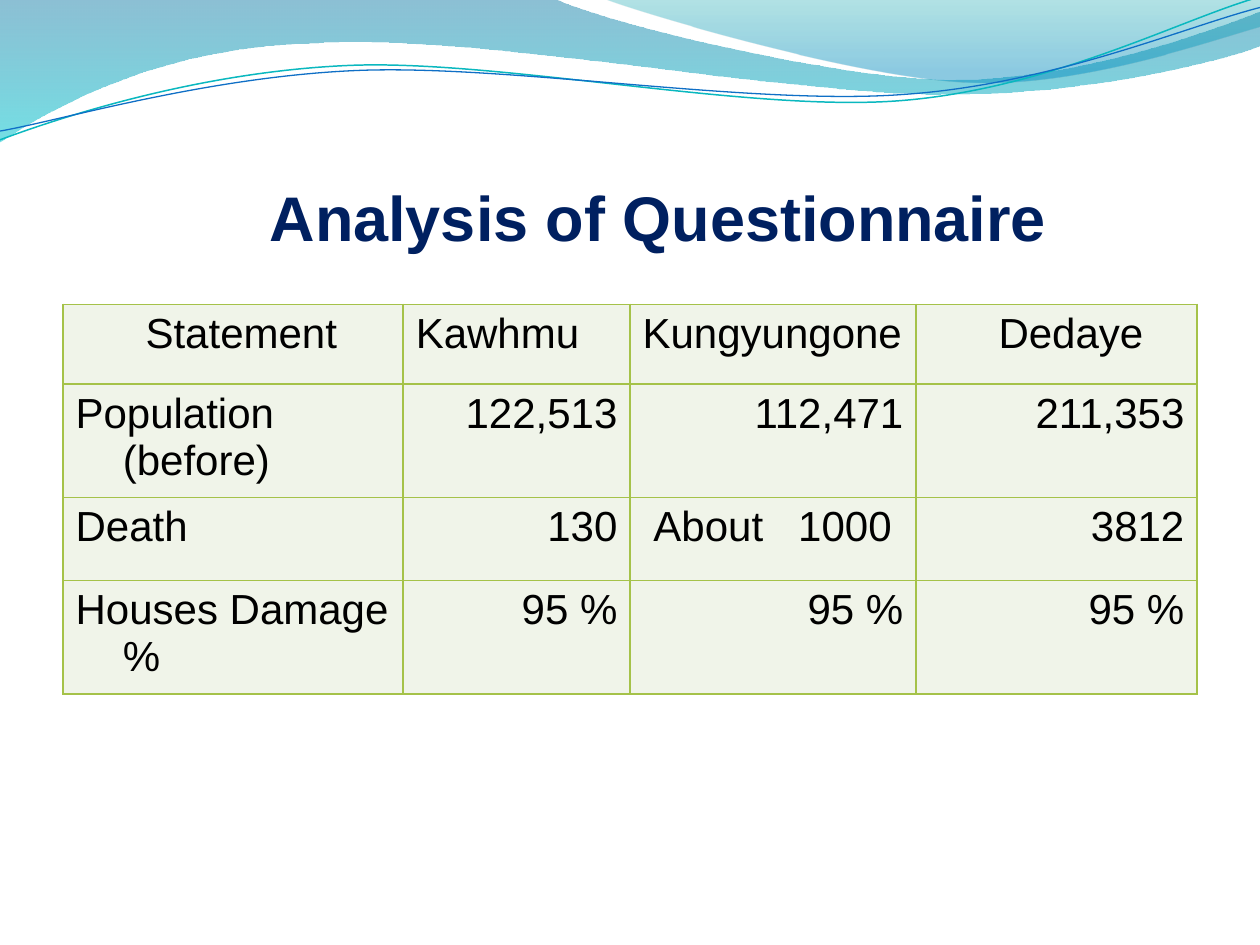
import math

import pptx
import pptx.dml.color
import pptx.enum.text
import pptx.oxml
import pptx.oxml.ns
import pptx.util

Pt = pptx.util.Pt
RGB = pptx.dml.color.RGBColor
ALIGN = pptx.enum.text.PP_ALIGN
ANCHOR = pptx.enum.text.MSO_ANCHOR

NAVY = RGB(0x00, 0x20, 0x60)
BLACK = RGB(0x00, 0x00, 0x00)
PALE = RGB(0xF0, 0xF4, 0xE9)
GREEN = RGB(0xA5, 0xC2, 0x49)
TEAL = RGB(0x0A, 0xB8, 0xBF)
BLUE = RGB(0x0F, 0x6F, 0xC6)
DEEP = RGB(0x00, 0x74, 0xA1)
CYAN = RGB(0x00, 0xC6, 0xCF)
SEA = RGB(0x00, 0xA1, 0xA9)
SKY = RGB(0x00, 0x8B, 0xBF)

FONT = "Arial"
HANG = 27
TILT = 2.7

BAND = [(0, 0), (316.8, -0.7),
        (342.7, 12.2, 478.1, 45.4, 545.8, 45.4),
        (614.2, 45.4, 689.8, 18.7, 720, 6.5),
        (720.7, 25.9),
        (707.8, 31.7, 626.4, 54.7, 537.1, 54),
        (447.8, 54, 275, 20.2, 185, 24.5),
        (92.9, 25.9, 33.1, 59.8, -0.7, 81.4),
        (0, 0)]
FAN = [(344.9, -0.7),
       (366.5, 7.9, 491, 44.6, 553.7, 46.8),
       (616.3, 49.7, 691.9, 23, 720, 15.1),
       (720, 0), (344.9, -0.7)]
UPPER = [(0, 79.9),
         (34.6, 67, 113.8, 41, 199.4, 37.4),
         (284.4, 33.8, 427, 64.1, 513.4, 57.6),
         (599.8, 51.1, 675.4, 10.8, 718.6, -1.4)]
LOWER = [(0, 74.9),
         (33.8, 69.1, 118.1, 43.9, 203.8, 40.3),
         (290.2, 36.7, 429.8, 60.5, 516.2, 54),
         (601.9, 48.2, 677.5, 15.1, 720, 4.3)]

WIDTHS = [194.4, 129.6, 163.4, 160.6]
HEIGHTS = [45.4, 64.8, 47.5, 64.8]
ROWS = [["Statement", "Kawhmu", "Kungyungone", "Dedaye"],
        ["Population (before)", "122,513", "112,471", "211,353"],
        ["Death", "130", "About 1000", "3812"],
        ["Houses Damage %", "95 %", "95 %", "95 %"]]


def make(text):
    """Parse an XML fragment in the drawing namespace."""
    space = pptx.oxml.ns.nsdecls("a")
    return pptx.oxml.parse_xml(text.replace(" NS", " " + space, 1))


def turn(x, y, mid):
    """Turn a point clockwise by the tilt about a centre."""
    sine, cosine = math.sin(math.radians(TILT)), math.cos(math.radians(TILT))
    dx, dy = x - mid[0], y - mid[1]
    return mid[0] + dx * cosine - dy * sine, mid[1] + dx * sine + dy * cosine


def draw(slide, path, close, mid=None):
    """Draw an outline of lines and cubic curves without shadow."""
    spots = [part[i:i + 2] for part in path for i in range(0, len(part), 2)]
    if mid:
        spots = [turn(x, y, mid) for x, y in spots]
    spots = [(Pt(x), Pt(y)) for x, y in spots]
    pen = slide.shapes.build_freeform(*spots[0], scale=1.0)
    pen.add_line_segments(spots[1:], close=close)
    shape = pen.convert_to_shape()
    shape.shadow.inherit = False
    if mid:
        shape.rotation = 360 - TILT
    lines = iter(shape.element.xpath(".//a:path/a:lnTo"))
    for part in path[1:]:
        line = next(lines)
        if len(part) == 6:
            curve = make("<a:cubicBezTo NS/>")
            line.addprevious(curve)
            for leg in (line, next(lines), next(lines)):
                curve.append(leg[0])
                leg.getparent().remove(leg)
    return shape


def add_wave(slide, path, stops):
    """Add a wave filled with a clear gradient from top to bottom."""
    shape = draw(slide, path, True)
    shape.line.fill.background()
    marks = "".join(
        f'<a:gs pos="{place * 1000}"><a:srgbClr val="{color}">'
        f'<a:alpha val="{alpha * 1000}"/></a:srgbClr></a:gs>'
        for place, color, alpha in stops)
    fill = make(f'<a:gradFill NS><a:gsLst>{marks}</a:gsLst>'
                '<a:lin ang="5400000" scaled="0"/></a:gradFill>')
    shape.element.spPr.find(pptx.oxml.ns.qn("a:custGeom")).addnext(fill)


def add_curve(slide, path, mid, color, width):
    """Add an open, tilted curved line."""
    shape = draw(slide, path, False, mid)
    shape.fill.background()
    shape.line.color.rgb = color
    shape.line.width = Pt(width)


def set_font(para, size, color, bold=False):
    """Set the font of a whole paragraph."""
    font = para.font
    font.name, font.size, font.bold = FONT, Pt(size), bold
    font.color.rgb = color


def add_title(slide, text):
    """Add the title, set a little right of centre."""
    box = slide.shapes.add_textbox(Pt(36.7), Pt(94.3), Pt(677.5 - 36.7), Pt(51.1))
    frame = box.text_frame
    frame.word_wrap = True
    frame.vertical_anchor = ANCHOR.BOTTOM
    frame.margin_left, frame.margin_top = Pt(38), Pt(3.6)
    frame.margin_right = frame.margin_bottom = 0
    para = frame.paragraphs[0]
    para.text = text
    para.alignment = ALIGN.CENTER
    set_font(para, 36, NAVY, True)


def indent(para, left, first):
    """Set the left margin and first line indent."""
    props = para._p.get_or_add_pPr()
    props.set("marL", str(Pt(left)))
    props.set("indent", str(Pt(first)))


def widen(para, text, gap):
    """Write two words with a widened space between them."""
    word, count = text.split()
    for piece in (word, " ", count):
        run = para.add_run()
        run.text = piece
        if piece == " ":
            run._r.get_or_add_rPr().set("spc", str(gap))


def fill_cell(cell, text, head, label):
    """Write one table cell with its borders and fill."""
    props = cell._tc.get_or_add_tcPr()
    for side in "LRTB":
        props.append(make(
            f'<a:ln{side} NS w="{Pt(1)}"><a:solidFill>'
            f'<a:srgbClr val="{GREEN}"/></a:solidFill></a:ln{side}>'))
    cell.fill.solid()
    cell.fill.fore_color.rgb = PALE
    para = cell.text_frame.paragraphs[0]
    if text.startswith("About"):
        widen(para, text, 1333)
        cell.margin_right = Pt(13.9)
    else:
        para.text = text
    if text in ("Statement", "Dedaye"):
        indent(para, 40, 0)
    else:
        indent(para, HANG, -HANG)
    para.alignment = ALIGN.LEFT if head or label else ALIGN.RIGHT
    set_font(para, 24, BLACK)


def add_grid(slide):
    """Add the table of townships."""
    frame = slide.shapes.add_table(
        len(ROWS), len(WIDTHS), Pt(36), Pt(174),
        Pt(sum(WIDTHS)), Pt(sum(HEIGHTS)))
    table = frame.table
    table.first_row = table.horz_banding = False
    for col, width in zip(table.columns, WIDTHS):
        col.width = Pt(width)
    for r, (height, texts) in enumerate(zip(HEIGHTS, ROWS)):
        table.rows[r].height = Pt(height)
        for c, text in enumerate(texts):
            fill_cell(table.cell(r, c), text, r == 0, c == 0)


def main():
    """Build the slide and save it."""
    deck = pptx.Presentation()
    deck.slide_width, deck.slide_height = Pt(720), Pt(540)
    slide = deck.slides.add_slide(deck.slide_layouts[6])
    add_wave(slide, BAND, [(0, DEEP, 45), (100, CYAN, 55)])
    add_wave(slide, FAN, [(0, SEA, 30), (80, SKY, 45)])
    add_curve(slide, UPPER, (359.3, 41.4), TEAL, 0.85)
    add_curve(slide, LOWER, (359.6, 42.5), BLUE, 0.75)
    add_grid(slide)
    add_title(slide, "Analysis of Questionnaire")
    deck.save("out.pptx")


if __name__ == "__main__":
    main()
